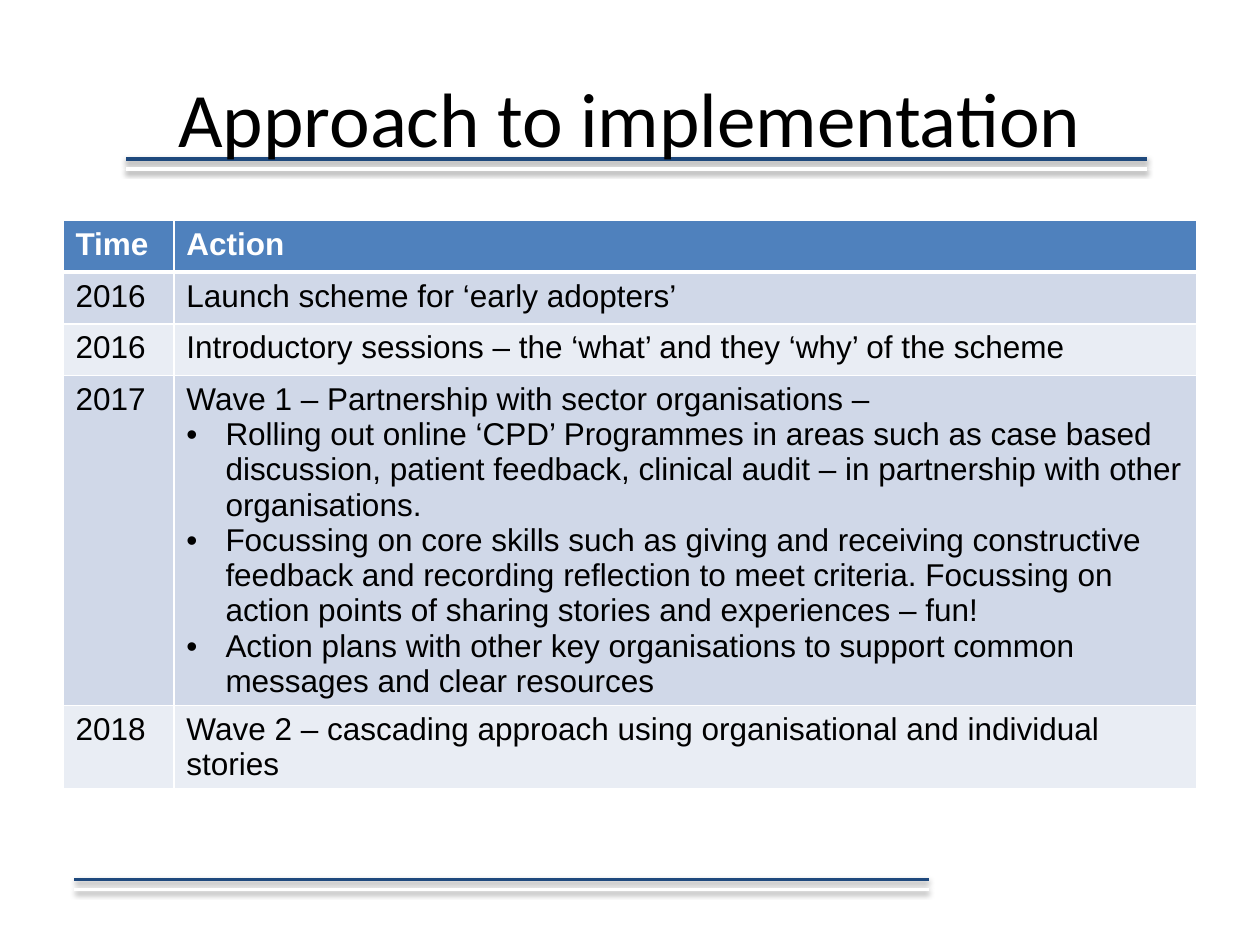
from dataclasses import dataclass

from lxml.etree import SubElement
from pptx import Presentation
from pptx.dml.color import RGBColor
from pptx.enum.shapes import MSO_CONNECTOR
from pptx.enum.text import MSO_ANCHOR, PP_ALIGN
from pptx.oxml import parse_xml
from pptx.oxml.ns import nsdecls, qn
from pptx.util import Inches, Pt


@dataclass(frozen=True)
class Theme:
    black: str = "000000"
    white: str = "FFFFFF"
    rule: str = "1F497D"
    header: str = "4F81BD"
    bands: tuple = ("D0D8E8", "E9EDF4")
    title_font: str = "Calibri"
    body_font: str = "Arial"
    title_size: int = 44
    body_size: int = 18
    rule_width: int = 2


theme = Theme()

presentation = Presentation()
presentation.slide_width = Inches(10)
presentation.slide_height = Inches(7.5)
slide = presentation.slides.add_slide(presentation.slide_layouts[5])


def format_text(paragraph, font_name, size, color, bold=False):
    for run in paragraph.runs:
        run.font.name = font_name
        run.font.size = Pt(size)
        run.font.bold = bold
        run.font.color.rgb = RGBColor.from_string(color)


def add_border(cell, side, width):
    border = SubElement(cell._tc.get_or_add_tcPr(), qn(f"a:{side}"), w=str(Pt(width)))
    fill = SubElement(border, qn("a:solidFill"))
    SubElement(fill, qn("a:srgbClr"), val=theme.white)


for left, right, top in [(1, 9.1, 1.26), (0.59, 7.37, 6.98)]:
    for offset, color in [(0, theme.rule), (0.08, theme.white)]:
        y = Inches(top + offset)
        rule = slide.shapes.add_connector(
            MSO_CONNECTOR.STRAIGHT, Inches(left), y, Inches(right), y
        )
        rule.line.color.rgb = RGBColor.from_string(color)
        rule.line.width = Pt(theme.rule_width)
        rule._element.spPr.append(parse_xml(
            f'<a:effectLst {nsdecls("a")}>'
            f'<a:outerShdw blurRad="{Pt(3.1)}" dist="{Pt(1.6)}" dir="5400000" rotWithShape="0">'
            f'<a:srgbClr val="{theme.black}"><a:alpha val="38000"/></a:srgbClr>'
            '</a:outerShdw></a:effectLst>'
        ))

title = slide.shapes.title
title.left, title.top = Inches(0.5), Inches(0.3)
title.width, title.height = Inches(9), Inches(1.25)
title.text_frame.text = "Approach to implementation"
title.text_frame.vertical_anchor = MSO_ANCHOR.MIDDLE
title.text_frame.paragraphs[0].alignment = PP_ALIGN.CENTER
format_text(title.text_frame.paragraphs[0], theme.title_font, theme.title_size, theme.black)
slide.shapes._spTree.append(title._element)

schedule = [
    ("Time", ["Action"]),
    ("2016", ["Launch scheme for ‘early adopters’"]),
    ("2016", ["Introductory sessions – the ‘what’ and they ‘why’ of the scheme"]),
    ("2017", [
        "Wave 1 – Partnership with sector organisations –",
        "Rolling out online ‘CPD’ Programmes in areas such as case based discussion, "
        "patient feedback, clinical audit – in partnership with other organisations.",
        "Focussing on core skills such as giving and receiving constructive feedback and "
        "recording reflection to meet criteria. Focussing on action points of sharing "
        "stories and experiences – fun!",
        "Action plans with other key organisations to support common messages and "
        "clear resources",
    ]),
    ("2018", ["Wave 2 – cascading approach using organisational and individual stories"]),
]
column_widths = [0.88, 8.12]
row_heights = [0.41, 0.41, 0.41, 2.62, 0.65]

table = slide.shapes.add_table(
    len(schedule), len(column_widths), Inches(0.5), Inches(1.75),
    Inches(sum(column_widths)), Inches(sum(row_heights)),
).table
for column, width in zip(table.columns, column_widths):
    column.width = Inches(width)
for row, height in zip(table.rows, row_heights):
    row.height = Inches(height)

for row_index, (time, actions) in enumerate(schedule):
    is_header = row_index == 0
    fill_color = theme.header if is_header else theme.bands[(row_index - 1) % 2]
    text_color = theme.white if is_header else theme.black
    for column_index, lines in enumerate([[time], actions]):
        cell = table.cell(row_index, column_index)
        for side in ("lnL", "lnR", "lnT", "lnB"):
            is_header_edge = (row_index, side) in [(0, "lnB"), (1, "lnT")]
            add_border(cell, side, 3 if is_header_edge else 1)
        cell.fill.solid()
        cell.fill.fore_color.rgb = RGBColor.from_string(fill_color)
        cell.text_frame.text = "\n".join(lines)
        for line_index, paragraph in enumerate(cell.text_frame.paragraphs):
            if line_index > 0:
                properties = paragraph._p.get_or_add_pPr()
                properties.set("marL", str(Inches(0.31)))
                properties.set("indent", str(Inches(-0.31)))
                SubElement(properties, qn("a:buFont"), typeface=theme.body_font)
                SubElement(properties, qn("a:buChar"), char="•")
            format_text(paragraph, theme.body_font, theme.body_size, text_color, is_header)

presentation.save("out.pptx")
